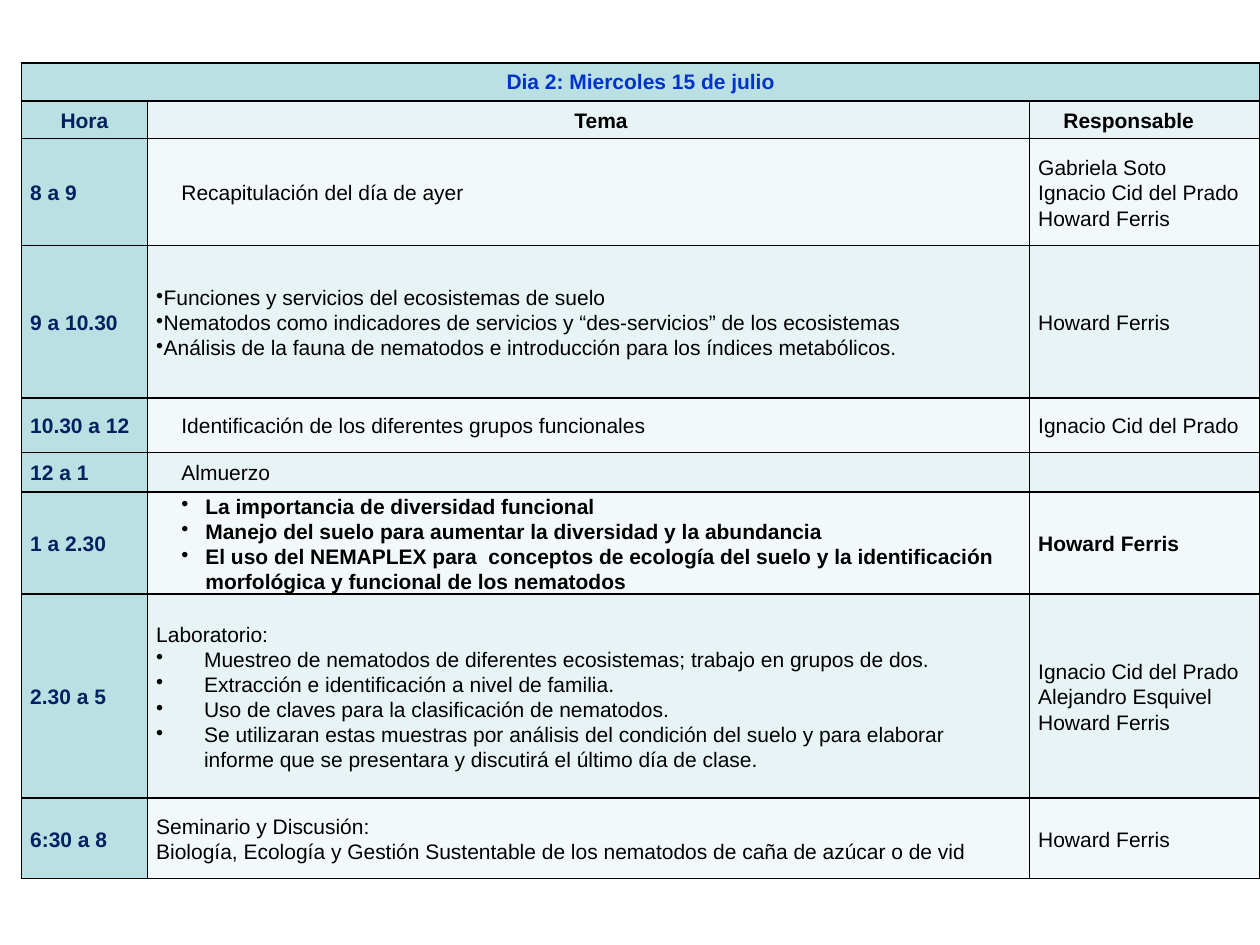
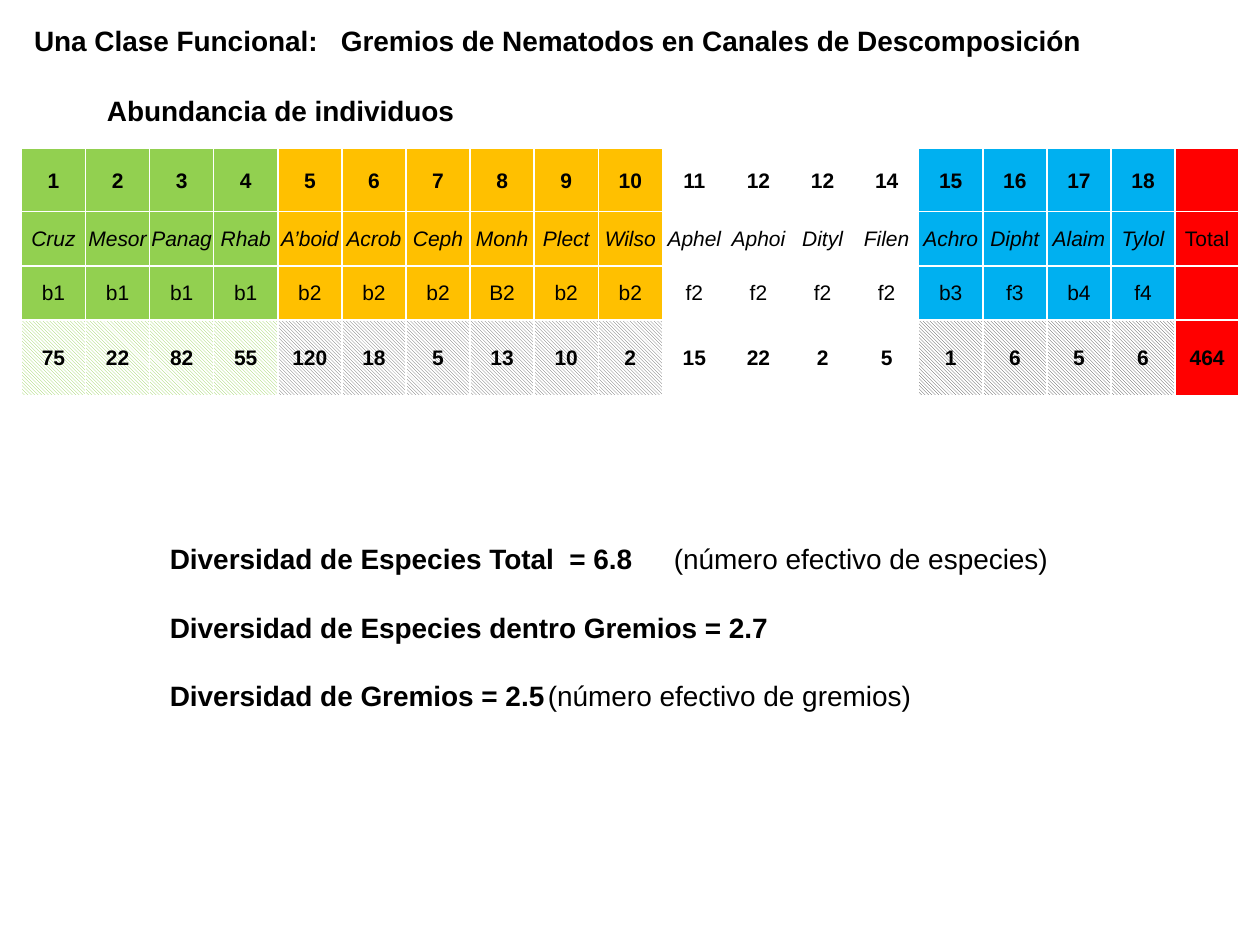
from dataclasses import dataclass

from lxml.etree import SubElement
from pptx import Presentation
from pptx.dml.color import RGBColor
from pptx.enum.dml import MSO_PATTERN
from pptx.enum.text import MSO_ANCHOR, MSO_AUTO_SIZE, PP_ALIGN
from pptx.oxml.ns import qn
from pptx.util import Inches, Pt


@dataclass(frozen=True)
class Theme:
    font: str = "Arial"
    cell_size: int = 12
    text_size: int = 16
    black: str = "000000"
    white: str = "FFFFFF"
    blue: str = "0033CC"
    navy: str = "002060"
    teal: str = "BBE0E3"
    stripes: tuple = ("E7F3F4", "F3F9FA")
    green: str = "92D050"
    amber: str = "FFC000"
    sky: str = "00B0F0"
    red: str = "FF0000"
    mid_grey: str = "606060"
    dark_grey: str = "404040"


T = Theme()
COLS, ROWS = 10, 7.5  # slide grid: one cell is one inch square


@dataclass(frozen=True)
class ParaStyle:
    left: float = 0
    first: float = 0
    bullet: bool = False
    tab: float = 0


PLAIN = ParaStyle()
INSET = ParaStyle(left=0.2)
TIGHT = ParaStyle(first=-0.38, bullet=True, tab=0.5)
DOTTED = ParaStyle(left=0.39, first=-0.19, bullet=True)
HANGING = ParaStyle(left=0.38, first=-0.38, bullet=True, tab=0.5)

# Each session: row height, hour, topic lines by style, people, bold
SCHEDULE = [
    (0.85, "8 a 9", [(INSET, ["Recapitulación del día de ayer"])],
     ["Gabriela Soto", "Ignacio Cid del Prado", "Howard Ferris"], False),
    (1.21, "9 a 10.30", [(TIGHT, [
        "Funciones y servicios del ecosistemas de suelo",
        "Nematodos como indicadores de servicios y “des-servicios” de los ecosistemas",
        "Análisis de la fauna de nematodos e introducción para los índices metabólicos."])],
     ["Howard Ferris"], False),
    (0.43, "10.30 a 12", [(INSET, ["Identificación de los diferentes grupos funcionales"])],
     ["Ignacio Cid del Prado"], False),
    (0.3, "12 a 1", [(INSET, ["Almuerzo"])], [], False),
    (0.81, "1 a 2.30", [(DOTTED, [
        "La importancia de diversidad funcional",
        "Manejo del suelo para aumentar la diversidad y la abundancia",
        "El uso del NEMAPLEX para  conceptos de ecología del suelo y la identificación "
        "morfológica y funcional de los nematodos"])],
     ["Howard Ferris"], True),
    (1.62, "2.30 a 5", [(PLAIN, ["Laboratorio:"]), (HANGING, [
        "Muestreo de nematodos de diferentes ecosistemas; trabajo en grupos de dos.",
        "Extracción e identificación a nivel de familia.",
        "Uso de claves para la clasificación de nematodos.",
        "Se utilizaran estas muestras por análisis del condición del suelo y para elaborar "
        "informe que se presentara y discutirá el último día de clase."])],
     ["Ignacio Cid del Prado", "Alejandro Esquivel", "Howard Ferris"], False),
    (0.64, "6:30 a 8", [(PLAIN, [
        "Seminario y Discusión:",
        "Biología, Ecología y Gestión Sustentable de los nematodos de caña de azúcar o de vid"])],
     ["Howard Ferris"], False),
]

# Each guild band: number of columns, fill, hatch colour of the counts
GUILDS = [(4, T.green, T.green), (6, T.amber, T.mid_grey),
          (4, T.white, T.white), (4, T.sky, T.dark_grey), (1, T.red, None)]
NUMBERS = "1 2 3 4 5 6 7 8 9 10 11 12 12 14 15 16 17 18".split() + [""]
GENERA = ("Cruz Mesor Panag Rhab A’boid Acrob Ceph Monh Plect Wilso Aphel Aphoi "
          "Dityl Filen Achro Dipht Alaim Tylol Total").split()
CODES = "b1 b1 b1 b1 b2 b2 b2 B2 b2 b2 f2 f2 f2 f2 b3 f3 b4 f4".split() + [""]
COUNTS = "75 22 82 55 120 18 5 13 10 2 15 22 2 5 1 6 5 6 464".split()

FINDINGS = [("Diversidad de Especies Total  = 6.8", "(número efectivo de especies)"),
            ("Diversidad de Especies dentro Gremios = 2.7", ""),
            ("Diversidad de Gremios = 2.5", "(número efectivo de gremios)")]


# Shared helpers
def rgb(value):
    return RGBColor.from_string(value)


def format_run(r, size, color=T.black, bold=False, italic=False):
    f = r.font
    f.name, f.size, f.bold, f.italic = T.font, Pt(size), bold, italic
    f.color.rgb = rgb(color)


def style_paragraph(p, style):
    pPr = p._p.get_or_add_pPr()
    pPr.set("marL", str(Inches(style.left)))
    pPr.set("indent", str(Inches(style.first)))
    if style.bullet:
        SubElement(pPr, qn("a:buChar"), char="•")
    if style.tab:
        tabs = SubElement(pPr, qn("a:tabLst"))
        SubElement(tabs, qn("a:tab"), pos=str(Inches(style.tab)), algn="l")


def add_grid(s, box, cols, rows, margin, border):
    x, y, w, h = map(Inches, box)
    table = s.shapes.add_table(len(rows), len(cols), x, y, w, h).table
    for column, share in zip(table.columns, cols):
        column.width = int(w * share / sum(cols))
    for row, share in zip(table.rows, rows):
        row.height = int(h * share / sum(rows))
    for cell in table.iter_cells():
        cell.margin_left = cell.margin_right = Inches(margin)
        cell.margin_top, cell.margin_bottom = Inches(0.01), 0
        cell.vertical_anchor = MSO_ANCHOR.MIDDLE
        for side in ("lnL", "lnR", "lnT", "lnB"):
            ln = SubElement(cell._tc.get_or_add_tcPr(), qn("a:" + side), w=str(Pt(1)))
            SubElement(SubElement(ln, qn("a:solidFill")), qn("a:srgbClr"), val=border)
    return table


def paint(cell, color):
    cell.fill.solid()
    cell.fill.fore_color.rgb = rgb(color)


def hatch(cell, color):
    cell.fill.patterned()
    cell.fill.pattern = MSO_PATTERN.LIGHT_DOWNWARD_DIAGONAL
    cell.fill.fore_color.rgb = rgb(color)
    cell.fill.back_color.rgb = rgb(T.white)


def write_cell(cell, groups, align=PP_ALIGN.LEFT, spacing=1.07, **look):
    lines = [(style, text) for style, texts in groups for text in texts]
    tf = cell.text_frame
    tf.text = "\n".join(text for _, text in lines)
    for p, (style, _) in zip(tf.paragraphs, lines):
        style_paragraph(p, style)
        p.alignment, p.line_spacing = align, spacing
        for r in p.runs:
            format_run(r, T.cell_size, **look)


def write_line(shape, box, text):
    shape.left, shape.top, shape.width, shape.height = map(Inches, box)
    tf = shape.text_frame
    tf.text = text
    tf.word_wrap, tf.auto_size = False, MSO_AUTO_SIZE.SHAPE_TO_FIT_TEXT
    tf.vertical_anchor = MSO_ANCHOR.TOP
    p = tf.paragraphs[0]
    p.alignment = PP_ALIGN.LEFT
    format_run(p.runs[0], T.text_size, bold=True)


# Day programme
def add_schedule(s, box):
    rows = [0.3, 0.3] + [session[0] for session in SCHEDULE]
    table = add_grid(s, box, [1, 7, 1.83], rows, 0.07, T.black)

    # Day banner and column heads
    banner = table.cell(0, 0)
    banner.merge(table.cell(0, 2))
    paint(banner, T.teal)
    write_cell(banner, [(PLAIN, ["Dia 2: Miercoles 15 de julio"])],
               PP_ALIGN.CENTER, 1, color=T.blue, bold=True)
    heads = [("Hora", PLAIN, PP_ALIGN.CENTER, T.navy, T.teal),
             ("Tema", INSET, PP_ALIGN.CENTER, T.black, T.stripes[0]),
             ("Responsable", INSET, PP_ALIGN.LEFT, T.black, T.stripes[0])]
    for col, (text, style, align, color, fill) in enumerate(heads):
        paint(table.cell(1, col), fill)
        write_cell(table.cell(1, col), [(style, [text])], align, color=color, bold=True)

    # Sessions
    for i, (_, hour, topics, people, bold) in enumerate(SCHEDULE, start=1):
        hour_cell, topic_cell, people_cell = table.rows[i + 1].cells
        paint(hour_cell, T.teal)
        write_cell(hour_cell, [(PLAIN, [hour])], color=T.navy, bold=True)
        for cell, groups in ((topic_cell, topics), (people_cell, [(PLAIN, people)])):
            paint(cell, T.stripes[i % 2])
            write_cell(cell, groups, bold=bold)


# Guild abundance
def add_abundance(s, box):
    bands = [(fill, mark) for n, fill, mark in GUILDS for _ in range(n)]
    table = add_grid(s, box, [1] * len(bands), [0.5, 0.43, 0.43, 0.6], 0.01, T.white)
    for row, texts in enumerate((NUMBERS, GENERA, CODES, COUNTS)):
        for col, (text, (fill, mark)) in enumerate(zip(texts, bands)):
            cell = table.cell(row, col)
            if texts is COUNTS and mark:
                hatch(cell, mark)
            else:
                paint(cell, fill)
            write_cell(cell, [(PLAIN, [text])], PP_ALIGN.CENTER, 1,
                       bold=texts in (NUMBERS, COUNTS),
                       italic=texts is GENERA and text != "Total")


def add_findings(s, box):
    tf = s.shapes.add_textbox(*map(Inches, box)).text_frame
    tf.word_wrap, tf.auto_size = True, MSO_AUTO_SIZE.SHAPE_TO_FIT_TEXT
    for i, (result, remark) in enumerate(FINDINGS):
        p = tf.add_paragraph() if i else tf.paragraphs[0]
        style_paragraph(p, ParaStyle(tab=4))
        if i:
            p.space_before = Pt(20)
        for text, bold in ((result, True), ("\t" + remark, False)):
            if text.strip():
                r = p.add_run()
                r.text = text
                format_run(r, T.text_size, bold=bold)


# Slides
def schedule_slide(prs):
    s = prs.slides.add_slide(prs.slide_layouts[6])
    add_schedule(s, (0.17, 0.5, COLS - 0.17, 6.46))


def guild_slide(prs):
    s = prs.slides.add_slide(prs.slide_layouts[5])
    write_line(s.shapes.title, (0.17, 0.14, 8.62, 0.37),
               "Una Clase Funcional:   Gremios de Nematodos en Canales de Descomposición")
    subtitle = s.shapes.add_textbox(0, 0, 0, 0)
    write_line(subtitle, (0.75, 0.69, 2.99, 0.37), "Abundancia de individuos")
    add_abundance(s, (0.17, 1.18, 9.67, 1.96))
    add_findings(s, (1.25, 4.25, 8.33, 1.45))


def main():
    prs = Presentation()
    prs.slide_width, prs.slide_height = Inches(COLS), Inches(ROWS)
    schedule_slide(prs)
    guild_slide(prs)
    prs.save("out.pptx")


if __name__ == "__main__":
    main()
